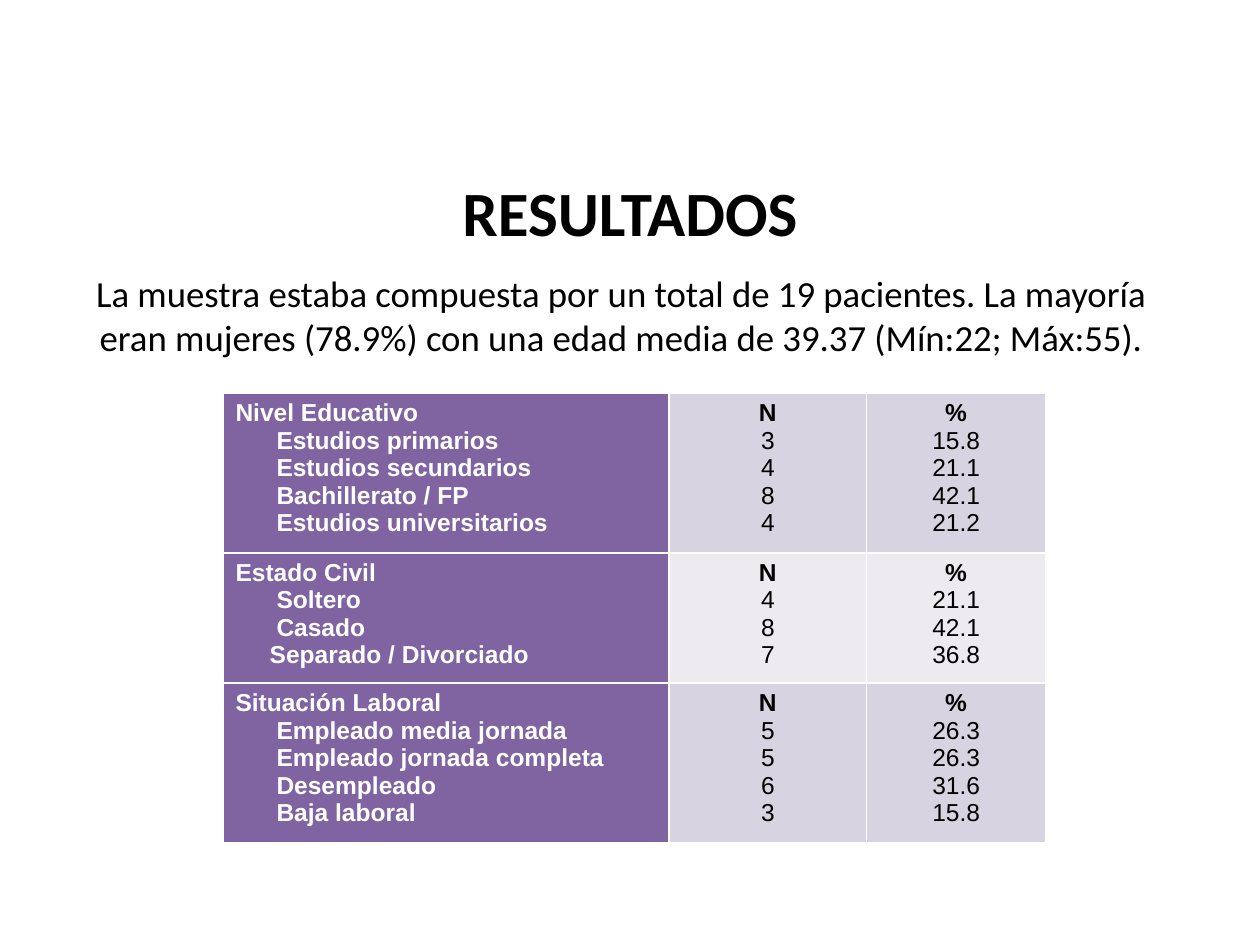
from lxml.etree import SubElement
from pptx import Presentation
from pptx.dml.color import RGBColor
from pptx.enum.text import MSO_ANCHOR, PP_ALIGN
from pptx.oxml.ns import qn
from pptx.util import Pt

PURPLE, WHITE, BLACK = "8064A2", "FFFFFF", "000000"
BAND_FILLS = ["D8D3E0", "EDEAF0"]
COLUMN_WIDTHS = [254.9, 113, 102.2]
LINE_HEIGHT, CELL_PADDING = 16.1, 7.2
CATEGORY_INDENT, SHORT_INDENT = 23.4, 19.5

GROUPS = [
    ("Nivel Educativo", [
        ("Estudios primarios", "3", "15.8"),
        ("Estudios secundarios", "4", "21.1"),
        ("Bachillerato / FP", "8", "42.1"),
        ("Estudios universitarios", "4", "21.2"),
    ]),
    ("Estado Civil", [
        ("Soltero", "4", "21.1"),
        ("Casado", "8", "42.1"),
        ("Separado / Divorciado", "7", "36.8"),
    ]),
    ("Situación Laboral", [
        ("Empleado media jornada", "5", "26.3"),
        ("Empleado jornada completa", "5", "26.3"),
        ("Desempleado", "6", "31.6"),
        ("Baja laboral", "3", "15.8"),
    ]),
]


def color(hex_string):
    return RGBColor.from_string(hex_string)


def format_paragraph(paragraph, font_name, size, hex_string, bold, alignment):
    paragraph.alignment = alignment
    for run in paragraph.runs:
        run.font.name = font_name
        run.font.size = Pt(size)
        run.font.bold = bold
        run.font.color.rgb = color(hex_string)


def add_title(slide, text):
    title = slide.shapes.title
    title.left, title.top, title.width, title.height = Pt(0), Pt(90), Pt(720), Pt(61.2)
    title.text_frame.text = text
    title.text_frame.vertical_anchor = MSO_ANCHOR.MIDDLE
    format_paragraph(title.text_frame.paragraphs[0], "Calibri", 36, BLACK, True, PP_ALIGN.CENTER)


def add_summary(slide, text):
    box = slide.shapes.add_textbox(Pt(31), Pt(151.2), Pt(648), Pt(73.4))
    box.text_frame.word_wrap = True
    box.text_frame.text = text
    format_paragraph(box.text_frame.paragraphs[0], "Calibri", 21, BLACK, False, PP_ALIGN.CENTER)


def set_borders(cell, hex_string, width):
    properties = cell._tc.get_or_add_tcPr()
    for side in ("a:lnL", "a:lnR", "a:lnT", "a:lnB"):
        line = SubElement(properties, qn(side), w=str(Pt(width)))
        fill = SubElement(line, qn("a:solidFill"))
        SubElement(fill, qn("a:srgbClr"), val=hex_string)


def fill_cell(cell, lines, fill, text_color, bold_lines, alignment):
    """Write one paragraph per line, the first bold_lines of them in bold."""
    set_borders(cell, WHITE, 1)
    cell.fill.solid()
    cell.fill.fore_color.rgb = color(fill)
    cell.text_frame.text = "\n".join(lines)
    for index, paragraph in enumerate(cell.text_frame.paragraphs):
        format_paragraph(paragraph, "Arial", 14, text_color, index < bold_lines, alignment)


def indent_categories(cell):
    for paragraph in cell.text_frame.paragraphs[1:]:
        indent = SHORT_INDENT if paragraph.text.startswith("Separado") else CATEGORY_INDENT
        paragraph._p.get_or_add_pPr().set("marL", str(Pt(indent)))


def add_results_table(slide):
    heights = [LINE_HEIGHT * (len(entries) + 1) + CELL_PADDING for _, entries in GROUPS]
    frame = slide.shapes.add_table(len(GROUPS), len(COLUMN_WIDTHS), Pt(127.4), Pt(224.6),
                                   Pt(sum(COLUMN_WIDTHS)), Pt(sum(heights)))
    table = frame.table
    table.first_row = False
    table.horz_banding = False
    for column, width in zip(table.columns, COLUMN_WIDTHS):
        column.width = Pt(width)
    for row_index, (heading, entries) in enumerate(GROUPS):
        table.rows[row_index].height = Pt(heights[row_index])
        names, counts, percentages = zip(*entries)
        name_cell, count_cell, percentage_cell = table.rows[row_index].cells
        fill_cell(name_cell, [heading, *names], PURPLE, WHITE, len(names) + 1, PP_ALIGN.LEFT)
        indent_categories(name_cell)
        band = BAND_FILLS[row_index % 2]
        fill_cell(count_cell, ["N", *counts], band, BLACK, 1, PP_ALIGN.CENTER)
        fill_cell(percentage_cell, ["%", *percentages], band, BLACK, 1, PP_ALIGN.CENTER)


def main():
    presentation = Presentation()
    presentation.slide_width, presentation.slide_height = Pt(720), Pt(540)
    slide = presentation.slides.add_slide(presentation.slide_layouts[5])
    add_title(slide, "RESULTADOS")
    add_summary(slide, "La muestra estaba compuesta por un total de 19 pacientes. La mayoría "
                       "eran mujeres (78.9%) con una edad media de 39.37 (Mín:22; Máx:55).")
    add_results_table(slide)
    presentation.save("out.pptx")


if __name__ == "__main__":
    main()
